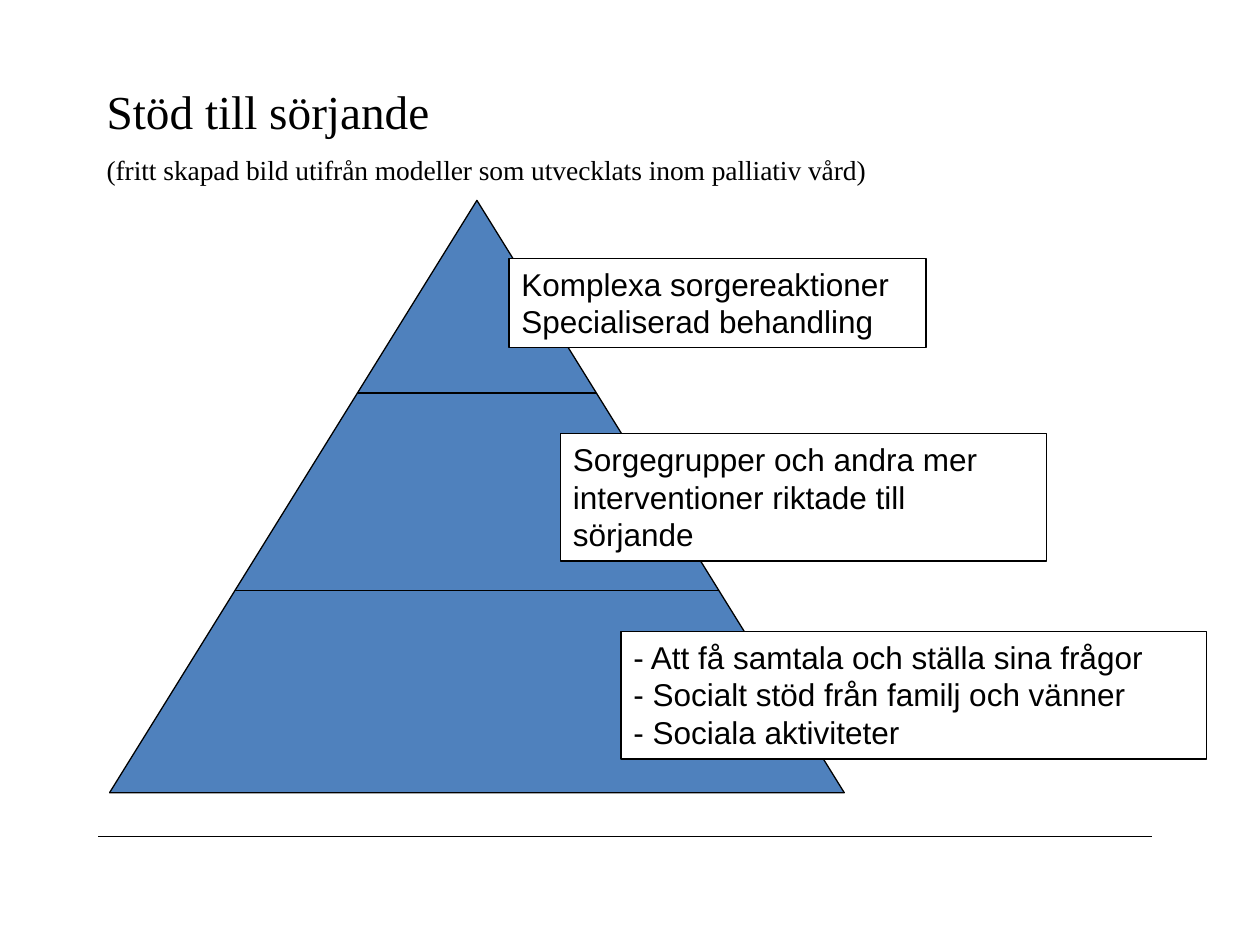
"""Build a slide with a three-level pyramid of support for the bereaved."""
from lxml.etree import SubElement
from pptx import Presentation
from pptx.dml.color import RGBColor as Rgb
from pptx.enum.shapes import MSO_CONNECTOR as Connector, MSO_SHAPE as Shape
from pptx.enum.text import MSO_ANCHOR as Anchor, PP_ALIGN as Align
from pptx.oxml.ns import qn
from pptx.util import Cm, Pt

COLORS = {"ink": "000000", "paper": "FFFFFF", "pyramid": "4F81BD"}
PYRAMID = (2.21, 4.04, 14.81, 11.94)
LEVELS = [7.92, 11.91]
LABELS = [
    ((12.52, 12.73, 11.81, 2.57), [
        "- Att få samtala och ställa sina frågor",
        "- Socialt stöd från familj och vänner",
        "- Sociala aktiviteter",
    ]),
    ((10.26, 5.21, 8.41, 1.8), ["Komplexa sorgereaktioner", "Specialiserad behandling"]),
    ((11.3, 8.74, 9.8, 2.57), [
        "Sorgegrupper och andra mer interventioner riktade till sörjande",
    ]),
]


class Painter:
    """Hold the style and the current page."""

    def __init__(self, page):
        self.page = page
        self.ink = Rgb.from_string(COLORS["ink"])

    def style(self, font, name, size):
        font.name, font.size = name, Pt(size)
        font.color.rgb = self.ink

    def line(self, left, right, y, width=0.75):
        line = self.page.shapes.add_connector(
            Connector.STRAIGHT, Cm(left), Cm(y), Cm(right), Cm(y))
        line.line.color.rgb = self.ink
        line.line.width = Pt(width)
        SubElement(line._element.spPr, qn("a:effectLst"))

    def shape(self, kind, bounds, fill):
        shape = self.page.shapes.add_shape(kind, *map(Cm, bounds))
        shape.shadow.inherit = False
        shape.fill.solid()
        shape.fill.fore_color.rgb = Rgb.from_string(COLORS[fill])
        shape.line.color.rgb = self.ink
        shape.line.width = Pt(0.75)
        return shape

    def label(self, bounds, lines):
        frame = self.shape(Shape.RECTANGLE, bounds, "paper").text_frame
        frame.word_wrap = True
        frame.vertical_anchor = Anchor.TOP
        frame.text = "\n".join(lines)
        for para in frame.paragraphs:
            para.alignment = Align.LEFT
            for span in para.runs:
                self.style(span.font, "Arial", 18)

    def title(self, bounds, heading, note):
        frame = self.page.shapes.add_textbox(*map(Cm, bounds)).text_frame
        frame.word_wrap = True
        frame.vertical_anchor = Anchor.MIDDLE
        para = frame.paragraphs[0]
        para.text = f"{heading}\v{note}"
        para.line_spacing = Pt(27)
        for span in para.runs:
            self.style(span.font, "Times New Roman", 27)
        para.runs[-1]._r.get_or_add_rPr().set("baseline", "-25000")


def main():
    deck = Presentation()
    deck.slide_width, deck.slide_height = Cm(25.4), Cm(19.05)
    painter = Painter(deck.slides.add_slide(deck.slide_layouts[6]))
    painter.line(1.98, 23.22, 16.87, 0.5)
    painter.title((1.9, 1.75, 21.23, 2.11), "Stöd till sörjande",
                  "(fritt skapad bild utifrån modeller som utvecklats inom palliativ vård)")
    painter.shape(Shape.ISOSCELES_TRIANGLE, PYRAMID, "pyramid")
    left, top, width, height = PYRAMID
    center = left + width / 2
    for y in LEVELS:
        half = (y - top) / height * width / 2
        painter.line(center - half, center + half, y)
    for bounds, lines in LABELS:
        painter.label(bounds, lines)
    deck.save("out.pptx")


if __name__ == "__main__":
    main()
